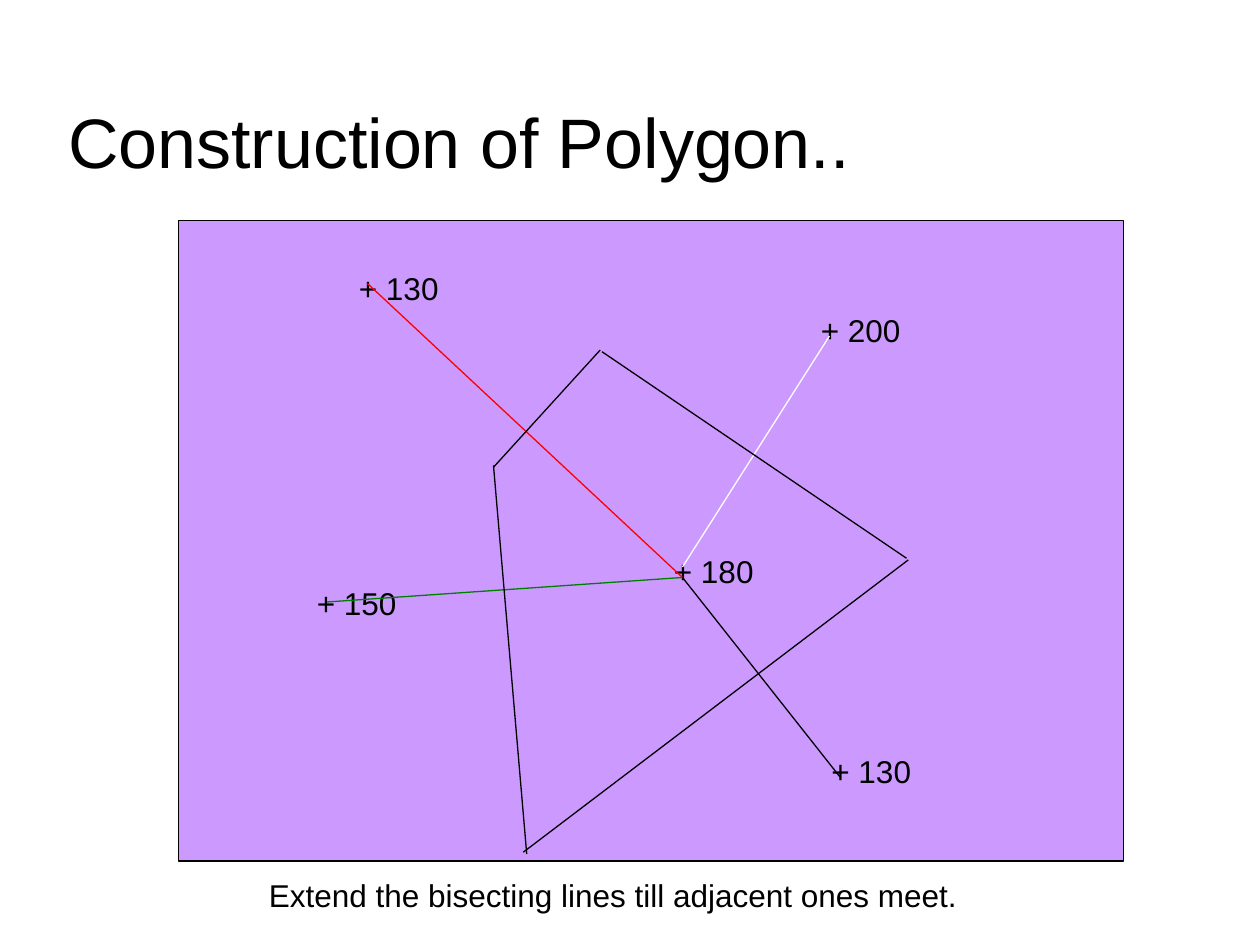
from pptx import Presentation
from pptx.dml.color import RGBColor
from pptx.enum.shapes import MSO_CONNECTOR, MSO_SHAPE
from pptx.enum.text import MSO_ANCHOR, MSO_AUTO_SIZE
from pptx.oxml.ns import qn
from pptx.util import Pt
from lxml import etree

STRAIGHT = MSO_CONNECTOR.STRAIGHT
RECTANGLE = MSO_SHAPE.RECTANGLE
TOP, BOTTOM = MSO_ANCHOR.TOP, MSO_ANCHOR.BOTTOM
FIT_SHAPE, NO_FIT = MSO_AUTO_SIZE.SHAPE_TO_FIT_TEXT, MSO_AUTO_SIZE.NONE

COLORS = {
    "black": "000000",
    "white": "FFFFFF",
    "red": "FF0000",
    "green": "008000",
    "lilac": "CC99FF",
}


class SlideBuilder:
    font_name = "Arial"
    line_width = 0.75

    def __init__(self, slide):
        self.slide = slide

    def color(self, name):
        return RGBColor.from_string(COLORS[name])

    def text(self, content, left, top, width, height, size=18, anchor=TOP, fit=FIT_SHAPE):
        shape = self.slide.shapes.add_textbox(Pt(left), Pt(top), Pt(width), Pt(height))
        frame = shape.text_frame
        frame.word_wrap = True
        frame.auto_size = fit
        frame.vertical_anchor = anchor
        run = frame.paragraphs[0].add_run()
        run.text = content
        run.font.name = self.font_name
        run.font.size = Pt(size)
        run.font.color.rgb = self.color("black")

    def rectangle(self, left, top, width, height, fill):
        shape = self.slide.shapes.add_shape(
            RECTANGLE, Pt(left), Pt(top), Pt(width), Pt(height))
        shape.shadow.inherit = False
        shape.fill.solid()
        shape.fill.fore_color.rgb = self.color(fill)
        shape.line.color.rgb = self.color("black")
        shape.line.width = Pt(self.line_width)

    def line(self, start, end, color="black"):
        points = [Pt(value) for value in (*start, *end)]
        connector = self.slide.shapes.add_connector(STRAIGHT, *points)
        connector.line.color.rgb = self.color(color)
        connector.line.width = Pt(self.line_width)
        etree.SubElement(connector._element.spPr, qn("a:effectLst"))


def main():
    presentation = Presentation()
    presentation.slide_width, presentation.slide_height = Pt(720), Pt(540)
    slide = presentation.slides.add_slide(presentation.slide_layouts[6])
    builder = SlideBuilder(slide)

    # Title and background rectangle
    builder.text("Construction of Polygon..", 32, 18, 612, 90,
                 size=40, anchor=BOTTOM, fit=NO_FIT)
    builder.rectangle(102, 126, 540, 366, "lilac")

    # Labelled points
    point_labels = [
        ("+ 130", 198, 150),
        ("+ 150", 174, 330),
        ("+ 200", 462, 174),
        ("+ 180", 378, 312),
        ("+ 130", 468, 426),
    ]
    for label, left, top in point_labels:
        builder.text(label, left, top, 66, 28.8)

    # Caption
    builder.text("Extend the bisecting lines till adjacent ones meet.",
                 146.6, 497, 452, 28.8)

    # Lines from the central point to the outer points
    center = (390, 330)
    builder.line((390, 324), (474, 192), "white")
    for end, color in [((210, 162), "red"), ((187, 344), "green"), ((480, 444), "black")]:
        builder.line(center, end, color)

    # Bisecting lines that form the polygon
    bisecting_lines = [
        ((282, 267), (343, 200)),
        ((344, 201), (518, 319)),
        ((301, 488), (282, 266)),
        ((299, 487), (519, 320)),
    ]
    for start, end in bisecting_lines:
        builder.line(start, end)

    presentation.save("out.pptx")


if __name__ == "__main__":
    main()
